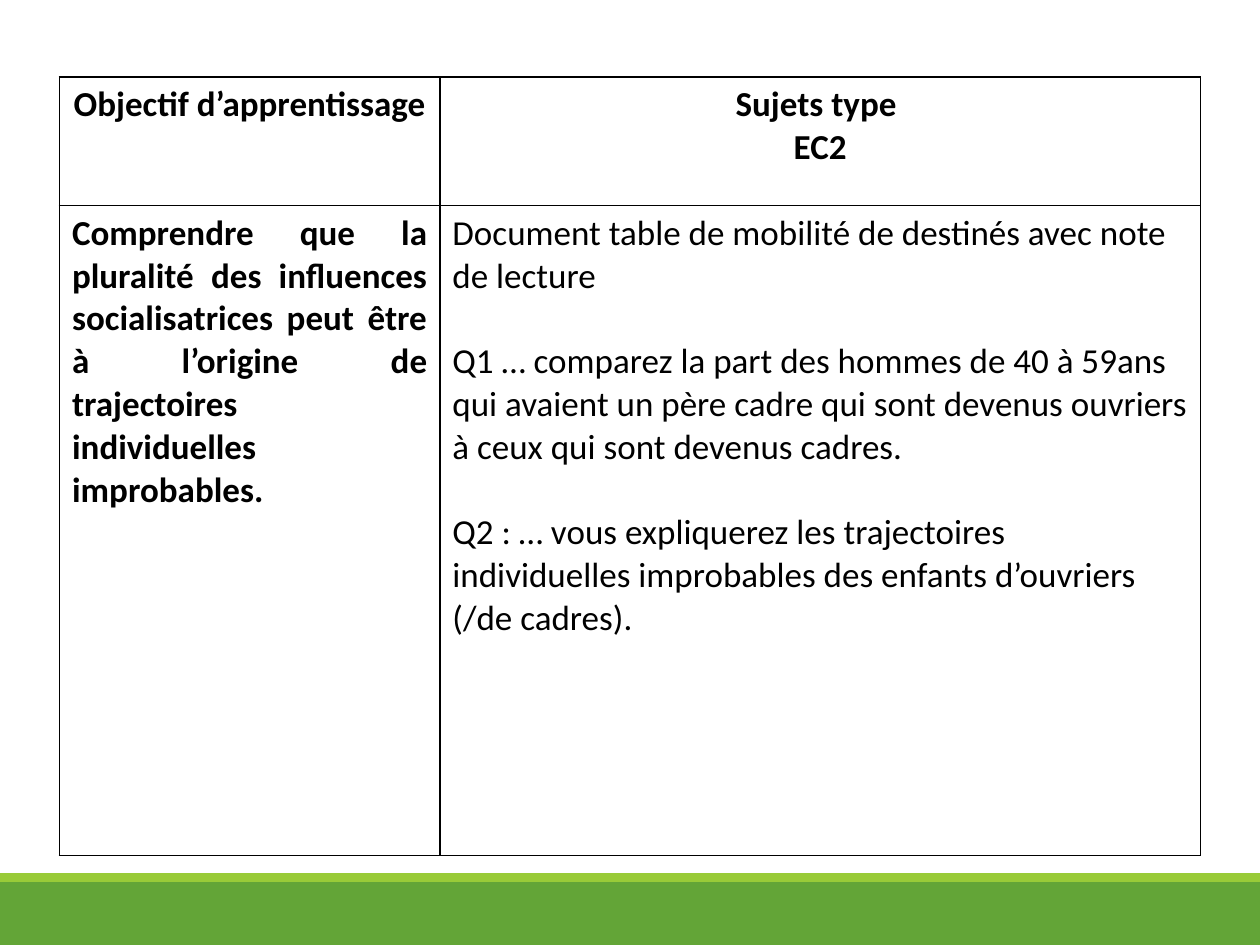
from dataclasses import dataclass

import pptx
import pptx.dml.color
import pptx.enum.shapes
import pptx.enum.text
import pptx.oxml
import pptx.oxml.ns
import pptx.util

Pt = pptx.util.Pt
RGB = pptx.dml.color.RGBColor
ALIGN = pptx.enum.text.PP_ALIGN


@dataclass(frozen=True)
class Theme:
    font: str = "Calibri"
    size: float = 20
    line_gap: float = 24.4
    ink: str = "000000"
    paper: str = "FFFFFF"
    band: str = "63A537"
    stripe: str = "99CB38"
    border: float = 1


THEME = Theme()

HEADINGS = (["Objectif d’apprentissage "], ["Sujets type ", "EC2"])
OBJECTIVE = [
    "Comprendre que la pluralité des influences socialisatrices peut être "
    "à l’origine de trajectoires individuelles improbables."
]
QUESTIONS = [
    "Document table de mobilité de destinés avec note de lecture",
    "Q1 … comparez la part des hommes de 40 à 59ans qui avaient un père cadre "
    "qui sont devenus ouvriers à ceux qui sont devenus cadres.",
    "Q2 : … vous expliquerez les trajectoires individuelles improbables "
    "des enfants d’ouvriers (/de cadres).",
]


def add_footer(slide, left, top, width, height):
    """Green band with a lighter stripe along its top."""
    stripe_height = 5
    parts = (
        (top + stripe_height, height - stripe_height, THEME.band),
        (top, stripe_height, THEME.stripe),
    )
    for part_top, part_height, color in parts:
        bar = slide.shapes.add_shape(
            pptx.enum.shapes.MSO_SHAPE.RECTANGLE,
            Pt(left), Pt(part_top), Pt(width), Pt(part_height))
        bar.shadow.inherit = False
        bar.fill.solid()
        bar.fill.fore_color.rgb = RGB.from_string(color)
        bar.line.fill.background()


def set_borders(cell):
    properties = cell._tc.get_or_add_tcPr()
    for position, side in enumerate(("lnL", "lnR", "lnT", "lnB")):
        properties.insert(position, pptx.oxml.parse_xml(
            f'<a:{side} {pptx.oxml.ns.nsdecls("a")} w="{Pt(THEME.border)}">'
            f'<a:solidFill><a:srgbClr val="{THEME.ink}"/></a:solidFill></a:{side}>'))


def fill_cell(cell, lines, align, bold=True, gap=0):
    cell.fill.solid()
    cell.fill.fore_color.rgb = RGB.from_string(THEME.paper)
    set_borders(cell)
    cell.text = "\n".join(lines)
    for index, paragraph in enumerate(cell.text_frame.paragraphs):
        paragraph.alignment = align
        paragraph.space_before = Pt(gap if index else 0)
        paragraph.font.name = THEME.font
        paragraph.font.size = Pt(THEME.size)
        paragraph.font.bold = bold
        paragraph.font.color.rgb = RGB.from_string(THEME.ink)


def add_subject_table(slide, left, top, width, height):
    """Learning objective beside the matching exam questions."""
    table = slide.shapes.add_table(
        2, 2, Pt(left), Pt(top), Pt(width), Pt(height)).table
    heading_height = 73.5
    table.rows[0].height = Pt(heading_height)
    table.rows[1].height = Pt(height - heading_height)
    # The questions column is twice as wide as the objective
    for column, share in zip(table.columns, (1, 2)):
        column.width = Pt(width * share / 3)

    for column, heading in enumerate(HEADINGS):
        fill_cell(table.cell(0, column), heading, ALIGN.CENTER)
    fill_cell(table.cell(1, 0), OBJECTIVE, ALIGN.JUSTIFY)
    fill_cell(table.cell(1, 1), QUESTIONS, ALIGN.LEFT, bold=False,
              gap=THEME.line_gap)


def main():
    deck = pptx.Presentation()
    deck.slide_width, deck.slide_height = Pt(720), Pt(540)
    slide = deck.slides.add_slide(deck.slide_layouts[6])
    add_footer(slide, 0, 499, 720, 41)
    add_subject_table(slide, 34, 44, 652, 445)
    deck.save("out.pptx")


if __name__ == "__main__":
    main()
